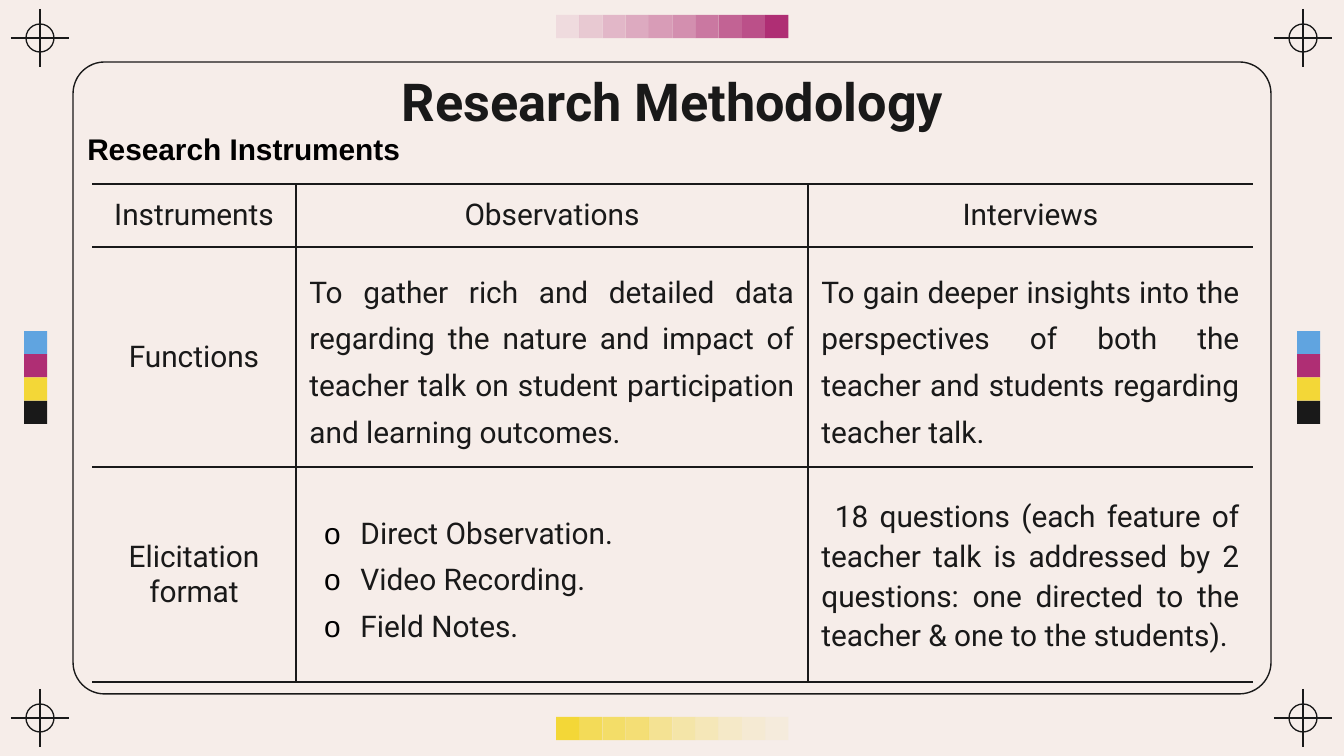
from lxml import etree
from pptx import Presentation
from pptx.dml.color import RGBColor
from pptx.enum.shapes import MSO_CONNECTOR, MSO_SHAPE
from pptx.enum.text import MSO_ANCHOR, PP_ALIGN
from pptx.oxml.ns import qn
from pptx.util import Inches, Pt

STRAIGHT = MSO_CONNECTOR.STRAIGHT
RECTANGLE, ROUNDED, OVAL = MSO_SHAPE.RECTANGLE, MSO_SHAPE.ROUNDED_RECTANGLE, MSO_SHAPE.OVAL
CENTER, JUSTIFY, MIDDLE = PP_ALIGN.CENTER, PP_ALIGN.JUSTIFY, MSO_ANCHOR.MIDDLE

COLORS = {"paper": "F6EDE9", "ink": "191919", "black": "000000",
          "blue": "60A4E0", "magenta": "AF2E74", "yellow": "F3D737"}

# Content: text, box in px, font, size, colour, alignment
HEADINGS = [
    ("Research Methodology", (106, 66, 1133, 70), "Roboto", 28, "ink", CENTER),
    ("Research Instruments", (74, 120, 1071, 58), "Arial", 16, "black", JUSTIFY),
]
LABEL = {"align": CENTER}
BODY = {"align": JUSTIFY, "spacing": 1.35}
BULLET = {**BODY, "margin": 0.38, "indent": -0.27, "bullet": "o"}
NOTE = {"align": JUSTIFY, "spacing": 1.14, "margin": 0, "indent": 0.1}
# Each cell: paragraph style, paragraphs
ROWS = [
    [(LABEL, ["Instruments"]), (LABEL, ["Observations"]), (LABEL, ["Interviews"])],
    [(LABEL, ["Functions"]),
     (BODY, ["To gather rich and detailed data regarding the nature and impact of "
             "teacher talk on student participation and learning outcomes."]),
     (BODY, ["To gain deeper insights into the perspectives of both the teacher "
             "and students regarding teacher talk."])],
    [(LABEL, ["Elicitation format"]),
     (BULLET, ["Direct Observation.", "Video Recording.", "Field Notes."]),
     (NOTE, ["18 questions (each feature of teacher talk is addressed by 2 questions: "
             "one directed to the teacher & one to the students)."])],
]
TABLE_LEFT, TABLE_TOP = 92, 184
COLUMN_WIDTHS = [204, 512, 445]
ROW_HEIGHTS = [63, 204, 215]

# Print marks: centres of the crosses, swatch columns, fading strips (opacity in %)
MARK_XS, MARK_YS, MARK_RADIUS, MARK_ARM = (40, 1303), (38, 718), 14, 29
SWATCHES = ["blue", "magenta", "yellow", "ink"]
SWATCH_XS, SWATCH_TOP, SWATCH = (24, 1297), 331, 23.25
STRIP_LEFT = 556
STRIPS = [
    ("yellow", 717, [100, 81, 72, 65, 48, 36, 27, 18, 12, 7]),
    ("magenta", 15, [9, 19, 28, 35, 42, 49, 61, 72, 82, 100]),
]


def px(length):
    return round(length * 914400 / 134.4)


def rgb(name):
    return RGBColor.from_string(COLORS[name])


def add_shape(kind, box, fill=None, line=None, weight=0.75, opacity=100):
    shape = slide.shapes.add_shape(kind, *map(px, box))
    shape.shadow.inherit = False
    if fill:
        shape.fill.solid()
        shape.fill.fore_color.rgb = rgb(fill)
        if opacity < 100:
            color = shape.fill._xPr.find(f".//{qn('a:srgbClr')}")
            etree.SubElement(color, qn("a:alpha"), val=str(opacity * 1000))
    else:
        shape.fill.background()
    if line:
        shape.line.color.rgb = rgb(line)
        shape.line.width = Pt(weight)
    else:
        shape.line.fill.background()
    return shape


def add_line(*ends):
    connector = slide.shapes.add_connector(STRAIGHT, *map(px, ends))
    connector.line.color.rgb = rgb("ink")
    connector.line.width = Pt(0.71)
    etree.SubElement(connector._element.spPr, qn("a:effectLst"))


def add_run(paragraph, text, font, size, color, bold=False):
    run = paragraph.add_run()
    run.text = text
    run.font.name, run.font.size, run.font.bold = font, Pt(size), bold
    run.font.color.rgb = rgb(color)


def style_paragraph(paragraph, style):
    paragraph.alignment = style["align"]
    if "spacing" in style:
        paragraph.line_spacing = style["spacing"]
    properties = paragraph._p.get_or_add_pPr()
    if "indent" in style:
        properties.set("marL", str(Inches(style["margin"])))
        properties.set("indent", str(Inches(style["indent"])))
    if "bullet" in style:
        color = etree.SubElement(properties, qn("a:buClr"))
        etree.SubElement(color, qn("a:srgbClr"), val=COLORS["black"])
        etree.SubElement(properties, qn("a:buFont"), typeface="Arial")
        etree.SubElement(properties, qn("a:buChar"), char=style["bullet"])


def set_borders(cell, visible):
    properties = cell._tc.get_or_add_tcPr()
    for index, side in enumerate("LRTB"):
        line = etree.Element(qn(f"a:ln{side}"), w=str(Pt(0.75)))
        if side in visible:
            fill = etree.SubElement(line, qn("a:solidFill"))
            etree.SubElement(fill, qn("a:srgbClr"), val=COLORS["ink"])
        else:
            etree.SubElement(line, qn("a:noFill"))
        properties.insert(index, line)


presentation = Presentation()
presentation.slide_width, presentation.slide_height = px(1344), px(756)
slide = presentation.slides.add_slide(presentation.slide_layouts[6])
slide.background.fill.solid()
slide.background.fill.fore_color.rgb = rgb("paper")

# Frame
frame = add_shape(ROUNDED, (73, 62, 1198, 632), line="ink")
frame.adjustments[0] = 0.05

# Colour swatches at both sides
for left in SWATCH_XS:
    for index, color in enumerate(SWATCHES):
        add_shape(RECTANGLE, (left, SWATCH_TOP + index * SWATCH, SWATCH, SWATCH), color)

# Registration marks in the corners
for y in MARK_YS:
    for x in MARK_XS:
        add_shape(OVAL, (x - MARK_RADIUS, y - MARK_RADIUS, 2 * MARK_RADIUS, 2 * MARK_RADIUS),
                  line="ink", weight=0.71)
        add_line(x, y - MARK_ARM, x, y + MARK_ARM)
        add_line(x - MARK_ARM, y, x + MARK_ARM, y)

# Fading strips at top and bottom
for color, top, opacities in STRIPS:
    for index, opacity in enumerate(opacities):
        add_shape(RECTANGLE, (STRIP_LEFT + index * SWATCH, top, SWATCH, SWATCH),
                  color, opacity=opacity)

# Headings
for text, box, font, size, color, align in HEADINGS:
    frame = slide.shapes.add_textbox(*map(px, box)).text_frame
    frame.word_wrap = True
    frame.vertical_anchor = MIDDLE
    frame.margin_left = frame.margin_right = Inches(0.1)
    frame.margin_top = frame.margin_bottom = Inches(0.1)
    frame.paragraphs[0].alignment = align
    add_run(frame.paragraphs[0], text, font, size, color, bold=True)

# Table
table = slide.shapes.add_table(
    len(ROWS), len(COLUMN_WIDTHS), px(TABLE_LEFT), px(TABLE_TOP),
    px(sum(COLUMN_WIDTHS)), px(sum(ROW_HEIGHTS))).table
table.first_row = table.horz_banding = False
for column, width in zip(table.columns, COLUMN_WIDTHS):
    column.width = px(width)
for row, height in zip(table.rows, ROW_HEIGHTS):
    row.height = px(height)
last = len(COLUMN_WIDTHS) - 1
for row_index, row in enumerate(ROWS):
    for column_index, (style, texts) in enumerate(row):
        cell = table.cell(row_index, column_index)
        cell.fill.background()
        cell.vertical_anchor = MIDDLE
        cell.margin_left = cell.margin_right = Inches(0.1)
        cell.margin_top = cell.margin_bottom = Inches(0.1)
        set_borders(cell, "TB" + "L" * (column_index > 0) + "R" * (column_index < last))
        for index, text in enumerate(texts):
            paragraphs = cell.text_frame
            paragraph = paragraphs.add_paragraph() if index else paragraphs.paragraphs[0]
            style_paragraph(paragraph, style)
            add_run(paragraph, text, "Roboto", 16, "ink")

presentation.save("out.pptx")
